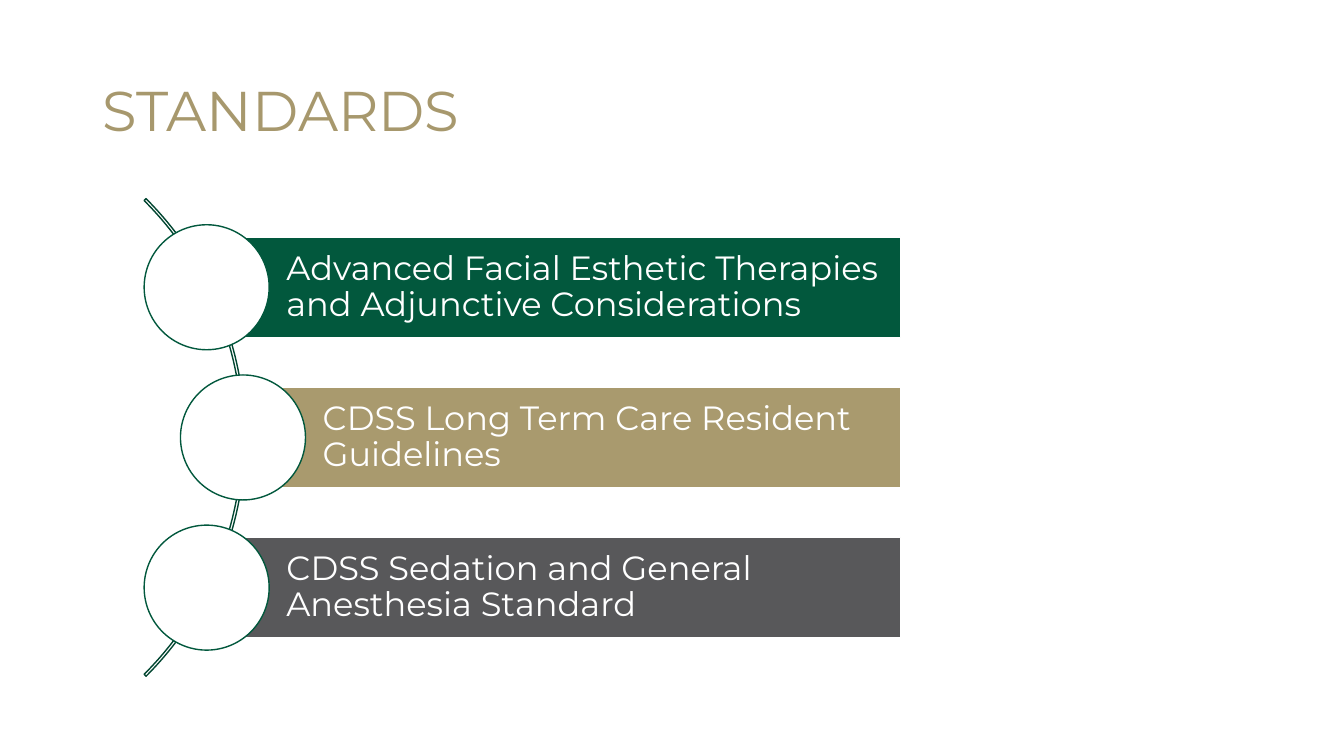
from pptx import Presentation
from pptx.dml.color import RGBColor
from pptx.enum import shapes, text
from pptx.util import Inches, Pt

WHITE = RGBColor(0xFF, 0xFF, 0xFF)
GREEN = RGBColor(0x02, 0x58, 0x3D)
DARK_GREEN = RGBColor(0x02, 0x46, 0x31)
GOLD = RGBColor(0xA9, 0x9A, 0x6E)
TITLE_GOLD = RGBColor(0xA7, 0x98, 0x6D)
GRAY = RGBColor(0x58, 0x58, 0x5A)

BAR_RIGHT, BAR_TOP, BAR_HEIGHT, BAR_PITCH = 8.93, 2.35, 1, 1.49
CIRCLE_SIZE = 1.24

# Wording, fill and left edge of each bar
STANDARDS = [
    ("Advanced Facial Esthetic Therapies and Adjunctive Considerations", GREEN, 2.05),
    ("CDSS Long Term Care Resident Guidelines", GOLD, 2.41),
    ("CDSS Sedation and General Anesthesia Standard", GRAY, 2.05),
]


class StandardsPage:
    font_name = "Montserrat"

    def __init__(self, deck):
        self.page = deck.slides.add_slide(deck.slide_layouts[5])

    def set_text(self, box, wording, size, color):
        frame = box.text_frame
        frame.text = wording
        frame.word_wrap = True
        frame.vertical_anchor = text.MSO_ANCHOR.MIDDLE
        para = frame.paragraphs[0]
        para.alignment = text.PP_ALIGN.LEFT
        para.line_spacing = 0.9
        font = para.runs[0].font
        font.name, font.size, font.color.rgb = self.font_name, Pt(size), color

    def title(self, wording, left, top, width, height):
        box = self.page.shapes.title
        box.left, box.top = Inches(left), Inches(top)
        box.width, box.height = Inches(width), Inches(height)
        self.set_text(box, wording, 40, TITLE_GOLD)

    def shape(self, kind, left, top, width, height, line, fill=None):
        shape = self.page.shapes.add_shape(
            kind, Inches(left), Inches(top), Inches(width), Inches(height))
        shape.shadow.inherit = False
        shape.line.color.rgb = line
        shape.line.width = Pt(1)
        if fill is None:
            shape.fill.background()
        else:
            shape.fill.solid()
            shape.fill.fore_color.rgb = fill
        return shape

    def arc(self, left, top, size):
        arc = self.shape(shapes.MSO_SHAPE.BLOCK_ARC, left, top, size, size, DARK_GREEN)
        for index, value in enumerate((189, 27, 0.004)):
            arc.adjustments[index] = value

    def bar(self, wording, fill, left, top):
        bar = self.shape(shapes.MSO_SHAPE.RECTANGLE, left, top,
                         BAR_RIGHT - left, BAR_HEIGHT, WHITE, fill)
        frame = bar.text_frame
        frame.margin_left = Inches(0.79)
        frame.margin_top = frame.margin_right = frame.margin_bottom = Inches(0.07)
        self.set_text(bar, wording, 24, WHITE)

    def circle(self, center_x, center_y):
        self.shape(shapes.MSO_SHAPE.OVAL, center_x - CIRCLE_SIZE / 2,
                   center_y - CIRCLE_SIZE / 2, CIRCLE_SIZE, CIRCLE_SIZE, GREEN, WHITE)


def main():
    deck = Presentation()
    deck.slide_width, deck.slide_height = Inches(13.33), Inches(7.5)
    page = StandardsPage(deck)

    # Heading
    page.title("STANDARDS", 0.92, 0.4, 11.5, 1.45)

    # Curved list: the arc, then a bar with a circle centred on its left edge
    page.arc(-4.27, 0.99, 6.7)
    for index, (wording, fill, left) in enumerate(STANDARDS):
        top = BAR_TOP + index * BAR_PITCH
        page.bar(wording, fill, left, top)
        page.circle(left, top + BAR_HEIGHT / 2)

    deck.save("out.pptx")


if __name__ == "__main__":
    main()
